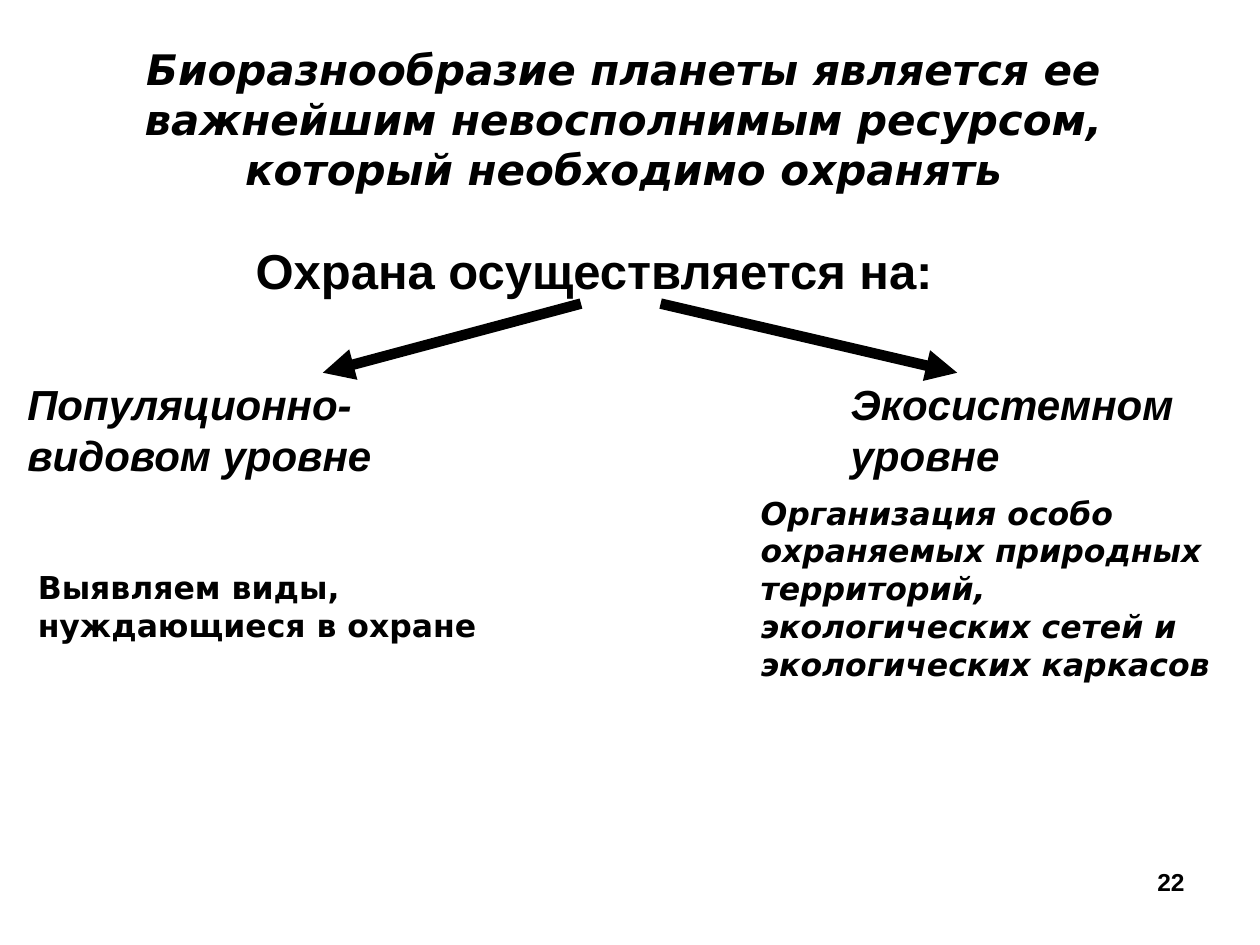
from lxml.etree import SubElement
from pptx import Presentation
from pptx.dml.color import RGBColor
from pptx.enum.shapes import MSO_CONNECTOR
from pptx.enum.text import MSO_ANCHOR, MSO_AUTO_SIZE, PP_ALIGN
from pptx.oxml.ns import qn
from pptx.util import Pt

SANS, WIDE = "Arial", "DejaVu Sans"
INK = "000000"


def color(code):
    return RGBColor.from_string(code)


def write(shape, box, text, size, face, slant=False, align=PP_ALIGN.LEFT):
    """Place a text shape in its box and fill it with one bold run."""
    shape.left, shape.top, shape.width, shape.height = map(Pt, box)
    frame = shape.text_frame
    frame.word_wrap = True
    frame.auto_size = MSO_AUTO_SIZE.NONE
    frame.vertical_anchor = MSO_ANCHOR.TOP
    para = frame.paragraphs[0]
    para.alignment = align
    para.space_before = Pt(0)
    run = para.add_run()
    run.text = text
    font = run.font
    font.name, font.size = face, Pt(size)
    font.bold, font.italic = True, slant
    font.color.rgb = color(INK)


def label(slide, box, *args, **style):
    write(slide.shapes.add_textbox(*map(Pt, box)), box, *args, **style)


def arrow(slide, start, end):
    line = slide.shapes.add_connector(
        MSO_CONNECTOR.STRAIGHT, *map(Pt, start + end))
    line.line.width = Pt(6)
    line.line.color.rgb = color(INK)
    SubElement(line.line._get_or_add_ln(), qn("a:tailEnd"), type="triangle")
    SubElement(line._element.spPr, qn("a:effectLst"))


def header(slide, box):
    write(slide.shapes.title, box,
          "Биоразнообразие планеты является ее важнейшим невосполнимым "
          "ресурсом, который необходимо охранять",
          24, WIDE, slant=True, align=PP_ALIGN.CENTER)


def branch(slide, box, name, detail, inset, drop, wide, tall, slant):
    """Draw a level name with its detail offset from the same corner."""
    left, top = box[:2]
    label(slide, box, name, 24, SANS, slant=True)
    label(slide, (left + inset, top + drop, wide, tall), detail,
          18, WIDE, slant=slant)


def scheme(slide, box):
    """Draw the root statement and its two branches."""
    left, top, width, height = box
    label(slide, (left + 130.5, top, 430.5, 41), "Охрана осуществляется на:",
          28, SANS)
    branch(slide, (left, top + 79, 294.5, 65.5),
           "Популяционно-видовом уровне",
           "Выявляем виды, нуждающиеся в охране",
           inset=6, drop=108, wide=345.5, tall=50, slant=False)
    branch(slide, (left + 470.5, top + 79, 214, 65.5),
           "Экосистемном уровне",
           "Организация особо охраняемых природных территорий, "
           "экологических сетей и экологических каркасов",
           inset=-51.5, drop=65.5, wide=283.5, tall=152.5, slant=True)
    for start, end in ((323.5, 176), (369, 538.5)):
        arrow(slide, (left + start, top + 39.5), (left + end, top + 79))


def footer(slide, box):
    label(slide, box, "22", 14, SANS, align=PP_ALIGN.RIGHT)


def main():
    deck = Presentation()
    deck.slide_width, deck.slide_height = Pt(720), Pt(540)
    slide = deck.slides.add_slide(deck.slide_layouts[5])
    header(slide, (14.5, 21, 683.5, 94.5))
    scheme(slide, (8.5, 134, 703, 297))
    footer(slide, (516, 492, 168, 37.5))
    deck.save("out.pptx")


if __name__ == "__main__":
    main()
